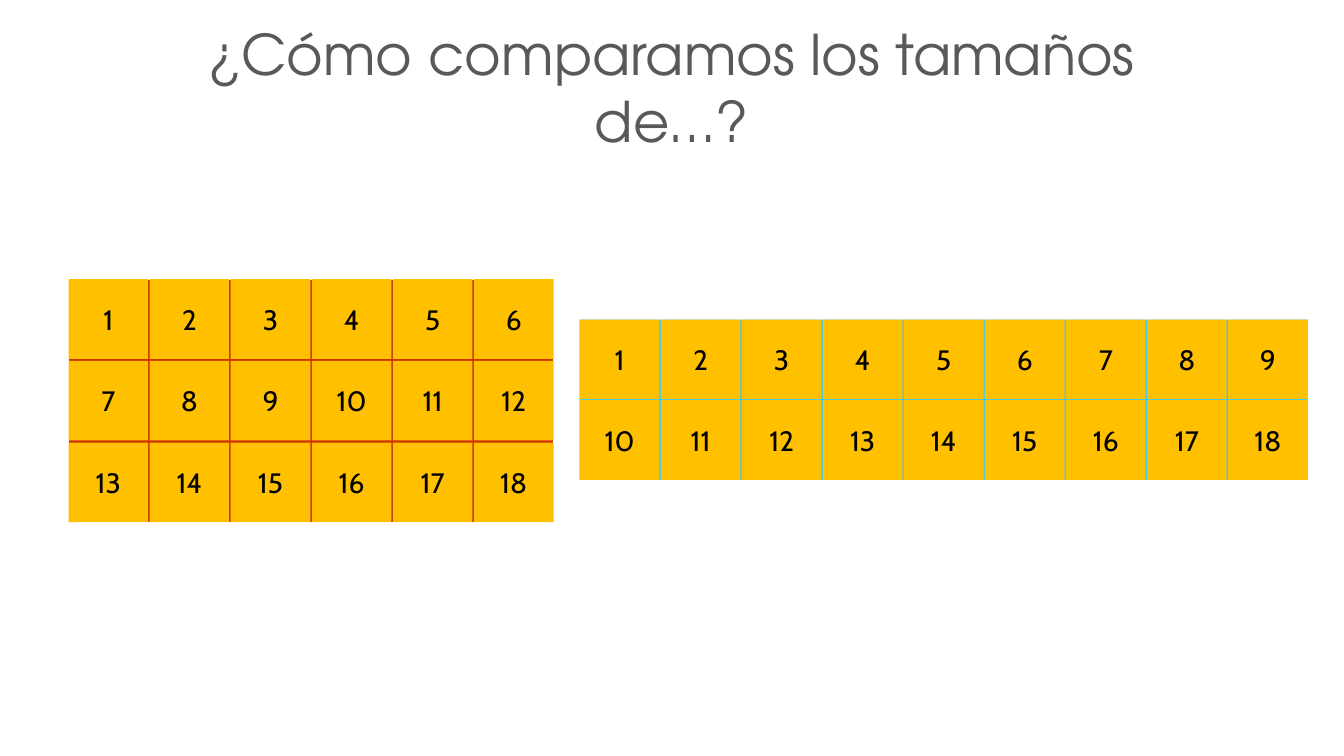
from dataclasses import dataclass

from pptx import Presentation
from pptx.dml.color import RGBColor
from pptx.enum.shapes import MSO_SHAPE
from pptx.enum.text import MSO_ANCHOR, MSO_AUTO_SIZE, PP_ALIGN
from pptx.util import Inches, Pt


@dataclass(frozen=True)
class Theme:
    title_font: str = "TeX Gyre Adventor"
    title_size: int = 40
    title_color: str = "595959"
    tile_font: str = "Cabin"
    tile_size: int = 20
    tile_text: str = "000000"
    tile_fill: str = "FFC000"
    red: str = "CC3300"
    blue: str = "33CCFF"
    white: str = "FFFFFF"


THEME = Theme()
TILE = 0.79  # side of a numbered square, inches


def style_text(shape, text, font_name, size, color):
    frame = shape.text_frame
    frame.text = text
    frame.word_wrap = True
    frame.auto_size = MSO_AUTO_SIZE.NONE
    frame.vertical_anchor = MSO_ANCHOR.MIDDLE
    para = frame.paragraphs[0]
    para.alignment = PP_ALIGN.CENTER
    para.font.name = font_name
    para.font.size = Pt(size)
    para.font.color.rgb = RGBColor.from_string(color)


def add_rectangle(page, box, fill, line=None):
    shape = page.shapes.add_shape(MSO_SHAPE.RECTANGLE, *map(Inches, box))
    shape.shadow.inherit = False
    shape.fill.solid()
    shape.fill.fore_color.rgb = RGBColor.from_string(fill)
    if line:
        shape.line.color.rgb = RGBColor.from_string(line)
        shape.line.width = Pt(0.25)
    else:
        shape.line.fill.background()
    return shape


def add_title(page, box, text):
    title = page.shapes.title
    title.left, title.top, title.width, title.height = map(Inches, box)
    style_text(title, text, THEME.title_font, THEME.title_size, THEME.title_color)


def add_number_grid(page, box, rows, columns, backing, line=None):
    """Number tiles row by row; the backing shows through the gaps."""
    left, top, width, height = box
    add_rectangle(page, box, backing, line)
    step_x = (width - TILE) / (columns - 1)
    step_y = (height - TILE) / (rows - 1)
    for index in range(rows * columns):
        row, column = divmod(index, columns)
        tile_box = (left + column * step_x, top + row * step_y, TILE, TILE)
        tile = add_rectangle(page, tile_box, THEME.tile_fill)
        style_text(tile, str(index + 1), THEME.tile_font, THEME.tile_size, THEME.tile_text)
        frame = tile.text_frame
        frame.margin_left = frame.margin_right = Inches(0.1)
        frame.margin_top = frame.margin_bottom = Inches(0.1)


def main():
    deck = Presentation()
    deck.slide_width, deck.slide_height = Inches(13.33), Inches(7.5)
    page = deck.slides.add_slide(deck.slide_layouts[5])

    # Heading
    add_title(page, (1.56, 0.12, 10.2, 1.48), "¿Cómo comparamos los tamaños de…?")

    # Two rectangles of 18 squares each
    add_number_grid(page, (0.68, 2.77, 4.81, 2.41), 3, 6, THEME.red, THEME.white)
    add_number_grid(page, (5.75, 3.17, 7.22, 1.59), 2, 9, THEME.blue)

    deck.save("out.pptx")


if __name__ == "__main__":
    main()
